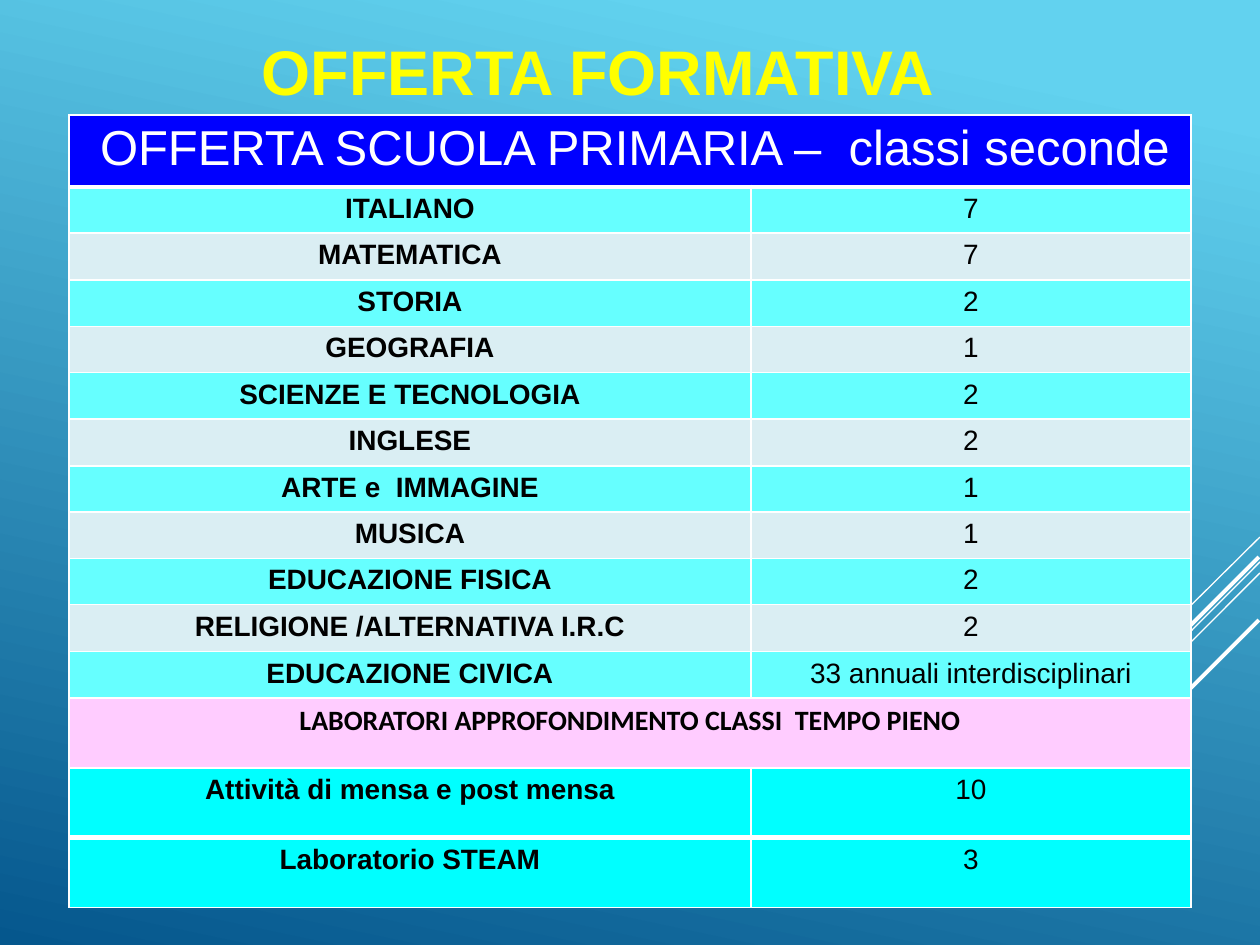
from dataclasses import dataclass

from lxml import etree
from pptx import Presentation
from pptx.dml.color import RGBColor
from pptx.enum.shapes import MSO_CONNECTOR
from pptx.enum.text import PP_ALIGN
from pptx.oxml.ns import qn
from pptx.util import Emu, Pt

CENTER = PP_ALIGN.CENTER
STRAIGHT = MSO_CONNECTOR.STRAIGHT
PX = 914400 // 126


@dataclass(frozen=True)
class Theme:
    sky: str = "62D2EF"
    deep: str = "05578D"
    white: str = "FFFFFF"
    black: str = "000000"
    title: str = "FFFF00"
    header: str = "0000FF"
    bands: tuple = ("66FFFF", "DAEEF3")
    labs: str = "FFCCFF"
    extra: str = "00FFFF"
    font: str = "Arial"
    labs_font: str = "Calibri"
    title_size: int = 36
    header_size: int = 28
    indent_size: int = 20
    body_size: int = 16
    thin: int = 1
    thick: int = 3


THEME = Theme()

SUBJECTS = [
    ("ITALIANO", "7"),
    ("MATEMATICA", "7"),
    ("STORIA", "2"),
    ("GEOGRAFIA", "1"),
    ("SCIENZE E TECNOLOGIA", "2"),
    ("INGLESE", "2"),
    ("ARTE e  IMMAGINE", "1"),
    ("MUSICA", "1"),
    ("EDUCAZIONE FISICA", "2"),
    ("RELIGIONE /ALTERNATIVA I.R.C", "2"),
    ("EDUCAZIONE CIVICA", "33 annuali interdisciplinari"),
]
EXTRAS = [("Attività di mensa e post mensa", "10"), ("Laboratorio STEAM", "3")]

# x1, y1, x2, y2 in px, width in points
STRIPES = [
    (1260, 537, 1155, 641, 0.75),
    (1260, 562, 920, 903, 0.75),
    (1260, 573, 1043, 790, 0.75),
    (1259, 557, 1061, 755, 2.25),
    (1259, 620, 1115, 764, 2.25),
]


def px(n):
    return Emu(n * PX)


def rgb(color):
    return RGBColor.from_string(color)


def add_run(paragraph, text, size, color, bold=False, font=THEME.font):
    run = paragraph.add_run()
    run.text = text
    run.font.size = Pt(size)
    run.font.name = font
    run.font.bold = bold
    run.font.color.rgb = rgb(color)


def paint_background(slide):
    fill = slide.background.fill
    fill.gradient()
    fill.gradient_angle = 360 - 102
    stops = zip(fill.gradient_stops, (THEME.sky, THEME.deep), (0.1, 1))
    for stop, color, position in stops:
        stop.color.rgb = rgb(color)
        stop.position = position


def add_stripe(slide, x1, y1, x2, y2, width):
    stripe = slide.shapes.add_connector(STRAIGHT, px(x1), px(y1), px(x2), px(y2))
    stripe.line.color.rgb = rgb(THEME.white)
    stripe.line.width = Pt(width)
    etree.SubElement(stripe._element.spPr, qn("a:effectLst"))


def add_title(slide):
    frame = slide.shapes.add_textbox(px(69), px(26), px(1074), px(89)).text_frame
    frame.word_wrap = True
    paragraph = frame.paragraphs[0]
    paragraph.alignment = CENTER
    add_run(paragraph, "OFFERTA FORMATIVA ", THEME.title_size, THEME.title, True)


def set_borders(cell, top, bottom):
    """Draw white borders; they must come before the fill in the cell's XML."""
    props = cell._tc.get_or_add_tcPr()
    sides = (("L", THEME.thin), ("R", THEME.thin), ("T", top), ("B", bottom))
    for index, (side, width) in enumerate(sides):
        border = etree.Element(qn(f"a:ln{side}"), w=str(Pt(width)))
        solid = etree.SubElement(border, qn("a:solidFill"))
        etree.SubElement(solid, qn("a:srgbClr"), val=THEME.white)
        props.insert(index, border)


def fill_row(table, index, color, texts, font=THEME.font):
    for column, text in enumerate(texts):
        cell = table.cell(index, column)
        cell.fill.solid()
        cell.fill.fore_color.rgb = rgb(color)
        paragraph = cell.text_frame.paragraphs[0]
        paragraph.alignment = CENTER
        if text:
            add_run(paragraph, text, THEME.body_size, THEME.black, column == 0, font)


def add_timetable(slide):
    count = len(SUBJECTS)
    labs_row = count + 1
    last_row = labs_row + len(EXTRAS)

    # Subject rows share 509 px as evenly as whole pixels allow
    edges = [round(509 * i / count) for i in range(count + 1)]
    heights = [72] + [b - a for a, b in zip(edges, edges[1:])] + [70] * 3
    widths = (682, 440)
    table = slide.shapes.add_table(
        len(heights), 2, px(69), px(115), px(sum(widths)), px(sum(heights))
    ).table
    table.first_row = table.horz_banding = False
    for column, width in zip(table.columns, widths):
        column.width = px(width)
    for row, height in zip(table.rows, heights):
        row.height = px(height)

    # Header
    fill_row(table, 0, THEME.header, ("", ""))
    heading = table.cell(0, 0).text_frame.paragraphs[0]
    add_run(heading, " ", THEME.indent_size, THEME.white, True)
    add_run(heading, "OFFERTA SCUOLA PRIMARIA –  classi seconde",
            THEME.header_size, THEME.white)

    # Subjects, laboratories and extra hours
    for index, texts in enumerate(SUBJECTS, 1):
        fill_row(table, index, THEME.bands[(index - 1) % 2], texts)
    fill_row(table, labs_row, THEME.labs,
             ("LABORATORI APPROFONDIMENTO CLASSI  TEMPO PIENO", ""), THEME.labs_font)
    for index, texts in enumerate(EXTRAS, labs_row + 1):
        fill_row(table, index, THEME.extra, texts)

    # Full-width rows and rules
    for index in (0, labs_row):
        table.cell(index, 0).merge(table.cell(index, 1))
    thick_below = (0, last_row - 1)
    for index in range(len(heights)):
        top = THEME.thick if index - 1 in thick_below else THEME.thin
        bottom = THEME.thick if index in thick_below else THEME.thin
        for column in range(2):
            set_borders(table.cell(index, column), top, bottom)


def main():
    prs = Presentation()
    prs.slide_width, prs.slide_height = px(1260), px(945)
    slide = prs.slides.add_slide(prs.slide_layouts[6])
    paint_background(slide)
    for stripe in STRIPES:
        add_stripe(slide, *stripe)
    add_title(slide)
    add_timetable(slide)
    prs.save("out.pptx")


if __name__ == "__main__":
    main()
